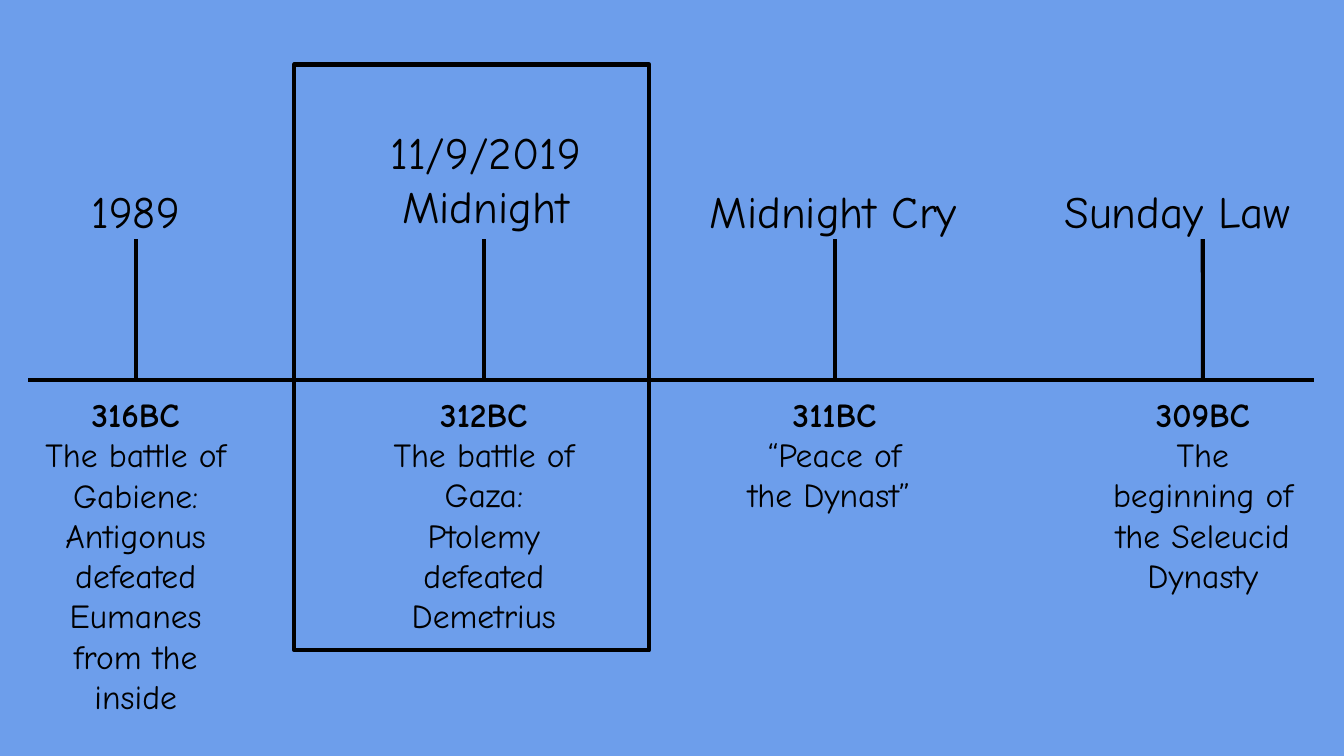
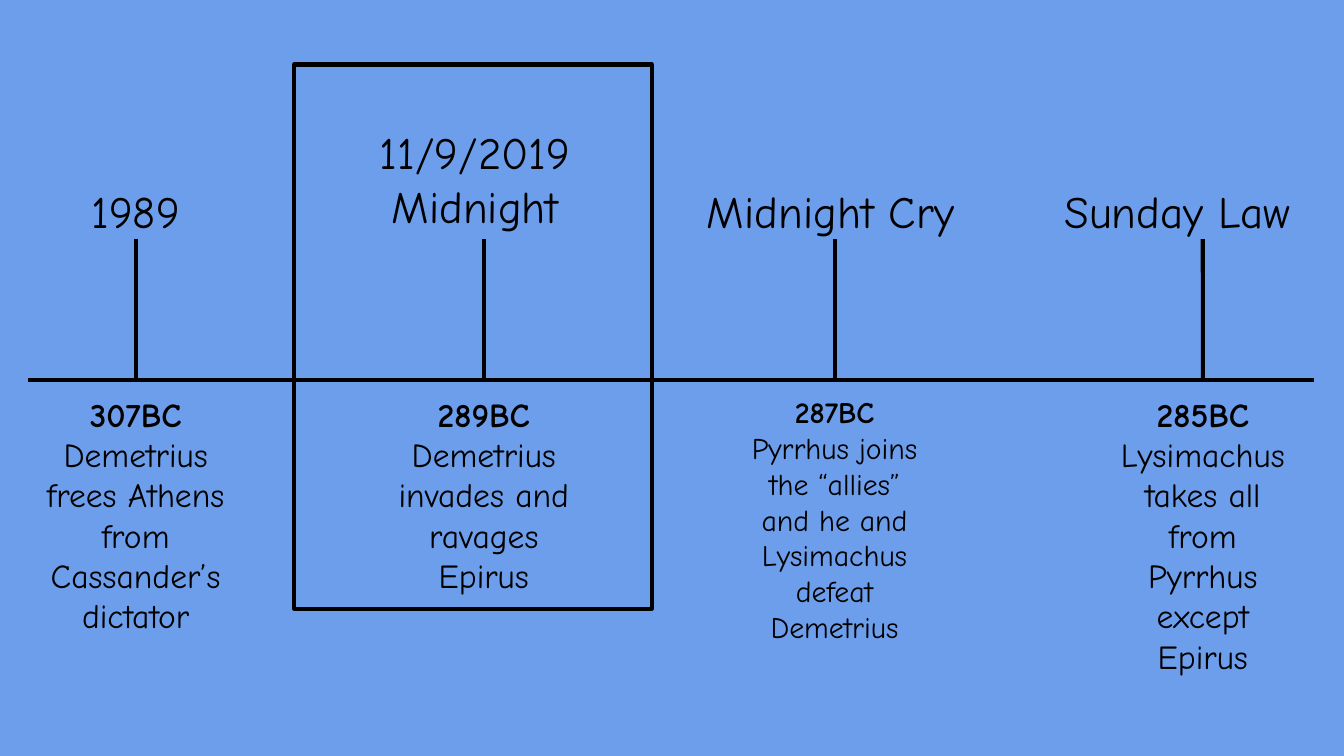
"""Build two timeline slides that share an axis, four ticks and a highlighted event."""
from lxml.etree import SubElement
from pptx import Presentation
from pptx.dml.color import RGBColor
from pptx.enum.shapes import MSO_CONNECTOR, MSO_SHAPE
from pptx.enum.text import PP_ALIGN
from pptx.oxml.ns import qn
from pptx.util import Inches, Pt

FONT, INK, SKY = "Comic Neue", "000000", "6D9EEB"
WIDTH, HEIGHT = 10, 5.625
AXIS_Y, AXIS_LEFT, AXIS_RIGHT = 2.83, 0.21, 9.78
TICK_TOP = 1.78
TICKS = [1.01, 3.6, 6.21, 8.95]
CAPTION_W = 1.56
HEADING_LINE_H, HEADING_PAD = 0.44, 0.07
FRAME_LEFT, FRAME_TOP = 2.19, 0.48

HEADINGS = [["1989"], ["11/9/2019", "Midnight"], ["Midnight Cry"], ["Sunday Law "]]

SLIDES = [
    {
        "headings": [(0.23, 1.56), (2.63, 1.97), (5, 2.4), (7.7, 2.23)],
        "frame": (2.64, 4.36),
        "events": [
            ("316BC", "The battle of Gabiene: Antigonus defeated Eumanes from the inside", 18, 2.41),
            ("312BC", "The battle of Gaza: Ptolemy defeated Demetrius", 18, 2.06),
            ("311BC", "“Peace of the Dynast” ", 18, 2.06),
            ("309BC", "The beginning of the Seleucid Dynasty", 18, 2.67),
        ],
    },
    {
        "headings": [(0.23, 1.56), (2.61, 1.85), (5, 2.36), (7.7, 2.23)],
        "frame": (2.66, 4.05),
        "events": [
            ("307BC", "Demetrius frees Athens from Cassander’s dictator", 18, 2.06),
            ("289BC", "Demetrius invades and ravages Epirus", 18, 1.7),
            ("287BC", "Pyrrhus joins the “allies” and he and Lysimachus defeat Demetrius", 16, 2.31),
            ("285BC", "Lysimachus takes all from Pyrrhus except Epirus", 18, 1.94),
        ],
    },
]


def rgb(value):
    return RGBColor.from_string(value)


def style_line(sp):
    sp.line.color.rgb = rgb(INK)
    sp.line.width = Pt(2.25)


def add_line(s, x1, y1, x2, y2):
    line = s.shapes.add_connector(
        MSO_CONNECTOR.STRAIGHT, Inches(x1), Inches(y1), Inches(x2), Inches(y2))
    style_line(line)
    SubElement(line._element.spPr, qn("a:effectLst"))
    return line


def add_text(s, left, top, width, height, lines, size, bold_first=False):
    sp = s.shapes.add_textbox(Inches(left), Inches(top), Inches(width), Inches(height))
    tf = sp.text_frame
    tf.word_wrap = True
    tf.margin_left = tf.margin_right = tf.margin_top = tf.margin_bottom = Inches(0.1)
    tf.text = "\n".join(lines)
    for i, p in enumerate(tf.paragraphs):
        p.alignment = PP_ALIGN.CENTER
        for r in p.runs:
            r.font.name, r.font.size = FONT, Pt(size)
            r.font.bold = bold_first and i == 0
            r.font.color.rgb = rgb(INK)
    return sp


def add_event(s, x, heading, box, event):
    date, story, size, height = event
    left, width = box
    heading_h = HEADING_PAD + HEADING_LINE_H * len(heading)
    title = add_text(s, left, TICK_TOP - heading_h, width, heading_h, heading, 24)
    caption = add_text(s, x - CAPTION_W / 2, AXIS_Y, CAPTION_W, height,
                       [date, story], size, bold_first=True)
    tick = add_line(s, x, TICK_TOP, x, AXIS_Y)
    if abs(left + width / 2 - x) < 0.005:
        tick.begin_connect(title, 2)
    tick.end_connect(caption, 0)


def add_frame(s, width, height):
    sp = s.shapes.add_shape(MSO_SHAPE.RECTANGLE, Inches(FRAME_LEFT), Inches(FRAME_TOP),
                            Inches(width), Inches(height))
    sp.fill.background()
    sp.shadow.inherit = False
    style_line(sp)


def main():
    prs = Presentation()
    prs.slide_width, prs.slide_height = Inches(WIDTH), Inches(HEIGHT)
    fill = prs.slide_master.background.fill
    fill.solid()
    fill.fore_color.rgb = rgb(SKY)
    for content in SLIDES:
        s = prs.slides.add_slide(prs.slide_layouts[6])
        add_line(s, AXIS_LEFT, AXIS_Y, AXIS_RIGHT, AXIS_Y)
        for parts in zip(TICKS, HEADINGS, content["headings"], content["events"]):
            add_event(s, *parts)
        add_frame(s, *content["frame"])
    prs.save("out.pptx")


if __name__ == "__main__":
    main()
